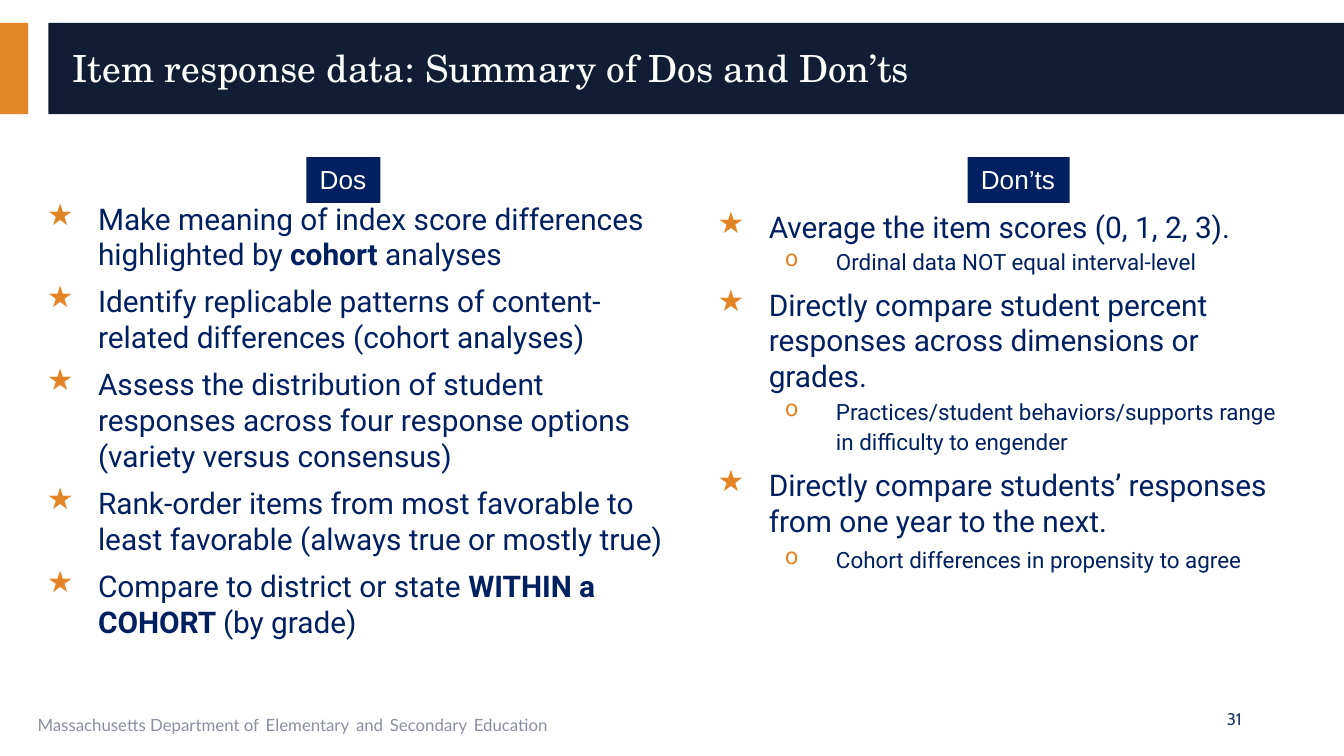
from dataclasses import dataclass

import pptx
import pptx.dml.color
import pptx.enum.shapes
import pptx.enum.text
import pptx.oxml.ns
import pptx.util
from lxml import etree

Inches = pptx.util.Inches
Pt = pptx.util.Pt
ANCHOR = pptx.enum.text.MSO_ANCHOR
ALIGN = pptx.enum.text.PP_ALIGN


@dataclass(frozen=True)
class Theme:
    orange: str = "E38526"
    dark: str = "101D34"
    navy: str = "002060"
    blue: str = "203B6A"
    gray: str = "8A8FA0"
    white: str = "FFFFFF"
    title: int = 20
    item: int = 16
    label: int = 14
    detail: int = 12
    small: int = 9


THEME = Theme()

DOS = [
    [("Make meaning of index score differences highlighted by ", False),
     ("cohort", True), (" analyses", False)],
    [("Identify replicable patterns of content-related differences "
      "(cohort analyses)", False)],
    [("Assess the distribution of student responses across four response "
      "options (variety versus consensus)", False)],
    [("Rank-order items from most favorable to least favorable "
      "(always true or mostly true)", False)],
    [("Compare to district or state ", False),
     ("WITHIN a COHORT ", True), ("(by grade)", False)],
]

DONTS = [
    ("Average the item scores (0, 1, 2, 3).", 1.15,
     "Ordinal data NOT equal interval-level", 1.15, 0, 6),
    ("Directly compare student percent responses across dimensions or grades.", 1,
     "Practices/student behaviors/supports range in difficulty to engender",
     1.15, 0, 6),
    ("Directly compare students’ responses from one year to the next.", 1,
     "Cohort differences in propensity to agree", 1, 4, 0),
]


def rgb(color):
    return pptx.dml.color.RGBColor.from_string(color)


def add_text(p, text, size=THEME.item, font="Roboto", color=THEME.navy, bold=False):
    r = p.add_run()
    r.text = text
    r.font.size = Pt(size)
    r.font.name = font
    r.font.bold = bold
    r.font.color.rgb = rgb(color)


def set_frame(tf, anchor=ANCHOR.TOP):
    tf.word_wrap = True
    tf.vertical_anchor = anchor
    tf.margin_left = tf.margin_right = Inches(0.07)
    tf.margin_top = tf.margin_bottom = Inches(0.04)


def add_box(s, x, y, w, h, anchor=ANCHOR.TOP):
    sp = s.shapes.add_textbox(Inches(x), Inches(y), Inches(w), Inches(h))
    set_frame(sp.text_frame, anchor)
    return sp.text_frame


def add_rect(s, x, y, w, h, color):
    sp = s.shapes.add_shape(pptx.enum.shapes.MSO_SHAPE.RECTANGLE,
                            Inches(x), Inches(y), Inches(w), Inches(h))
    sp.shadow.inherit = False
    sp.fill.solid()
    sp.fill.fore_color.rgb = rgb(color)
    sp.line.fill.background()
    return sp


def add_label(s, x, w, text):
    tf = add_rect(s, x, 1.17, w, 0.34, THEME.navy).text_frame
    tf.word_wrap = False
    tf.auto_size = pptx.enum.text.MSO_AUTO_SIZE.SHAPE_TO_FIT_TEXT
    tf.vertical_anchor = ANCHOR.TOP
    p = tf.paragraphs[0]
    p.alignment = ALIGN.LEFT
    add_text(p, text, size=THEME.label, font="Arial", color=THEME.white)


def add_bullet(tf, runs, level=0, size=THEME.item, spacing=1, before=0, after=0):
    p = tf.paragraphs[0] if not tf.paragraphs[0].runs else tf.add_paragraph()
    p.level = level
    pPr = p._p.get_or_add_pPr()
    pPr.set("marL", str(Inches(0.38 + 0.5 * level)))
    pPr.set("indent", str(Inches(-0.38)))
    qn = pptx.oxml.ns.qn
    bu_clr = etree.SubElement(pPr, qn("a:buClr"))
    etree.SubElement(bu_clr, qn("a:srgbClr"), val=THEME.orange)
    etree.SubElement(pPr, qn("a:buChar"), char="o" if level else "★")
    p.line_spacing = spacing
    p.space_before = Pt(before)
    p.space_after = Pt(after)
    for text, bold in runs:
        add_text(p, text, size=size, bold=bold)


def add_title(s, text):
    sp = s.shapes.title
    sp.left, sp.top = Inches(0.47), Inches(0.24)
    sp.width, sp.height = Inches(9.33), Inches(0.56)
    sp.element.getparent().append(sp.element)
    set_frame(sp.text_frame, ANCHOR.MIDDLE)
    p = sp.text_frame.paragraphs[0]
    p.alignment = ALIGN.LEFT
    p.line_spacing = 0.9
    add_text(p, text, size=THEME.title, font="TeX Gyre Schola", color=THEME.white)


def add_footer(s, words, number):
    p = add_box(s, 0.21, 5.21, 6.33, 0.3).paragraphs[0]
    for i, word in enumerate(words):
        if i:
            add_text(p, " ", size=THEME.label, font="Lato", color=THEME.blue)
        add_text(p, word, size=THEME.small, font="Lato", color=THEME.gray)
    p = add_box(s, 9.02, 5.21, 0.29, 0.28, ANCHOR.MIDDLE).paragraphs[0]
    p.alignment = ALIGN.RIGHT
    add_text(p, number, size=THEME.small, font="Cabin", color=THEME.blue)


def add_dos(s):
    tf = add_box(s, 0.28, 1.45, 4.73, 3.53)
    for runs in DOS:
        add_bullet(tf, runs, after=0 if runs is DOS[-1] else 6)


def add_donts(s):
    tf = add_box(s, 5.27, 1.47, 4.42, 2.64)
    for item, item_spacing, detail, spacing, before, after in DONTS:
        add_bullet(tf, [(item, False)], spacing=item_spacing)
        add_bullet(tf, [(detail, False)], level=1, size=THEME.detail,
                   spacing=spacing, before=before, after=after)


def main():
    prs = pptx.Presentation()
    prs.slide_width, prs.slide_height = Inches(10), Inches(10 * 9 / 16)
    s = prs.slides.add_slide(prs.slide_layouts[5])
    add_rect(s, 0, 0.17, 0.21, 0.68, THEME.orange)
    add_rect(s, 0.36, 0.17, 9.64, 0.68, THEME.dark)
    add_title(s, "Item response data: Summary of Dos and Don’ts")
    add_footer(s, ["Massachusetts Department of", "Elementary", "and",
                   "Secondary", "Education"], "31")
    add_donts(s)
    add_dos(s)
    add_label(s, 2.28, 0.55, "Dos")
    add_label(s, 7.2, 0.76, "Don’ts")
    prs.save("out.pptx")


if __name__ == "__main__":
    main()
